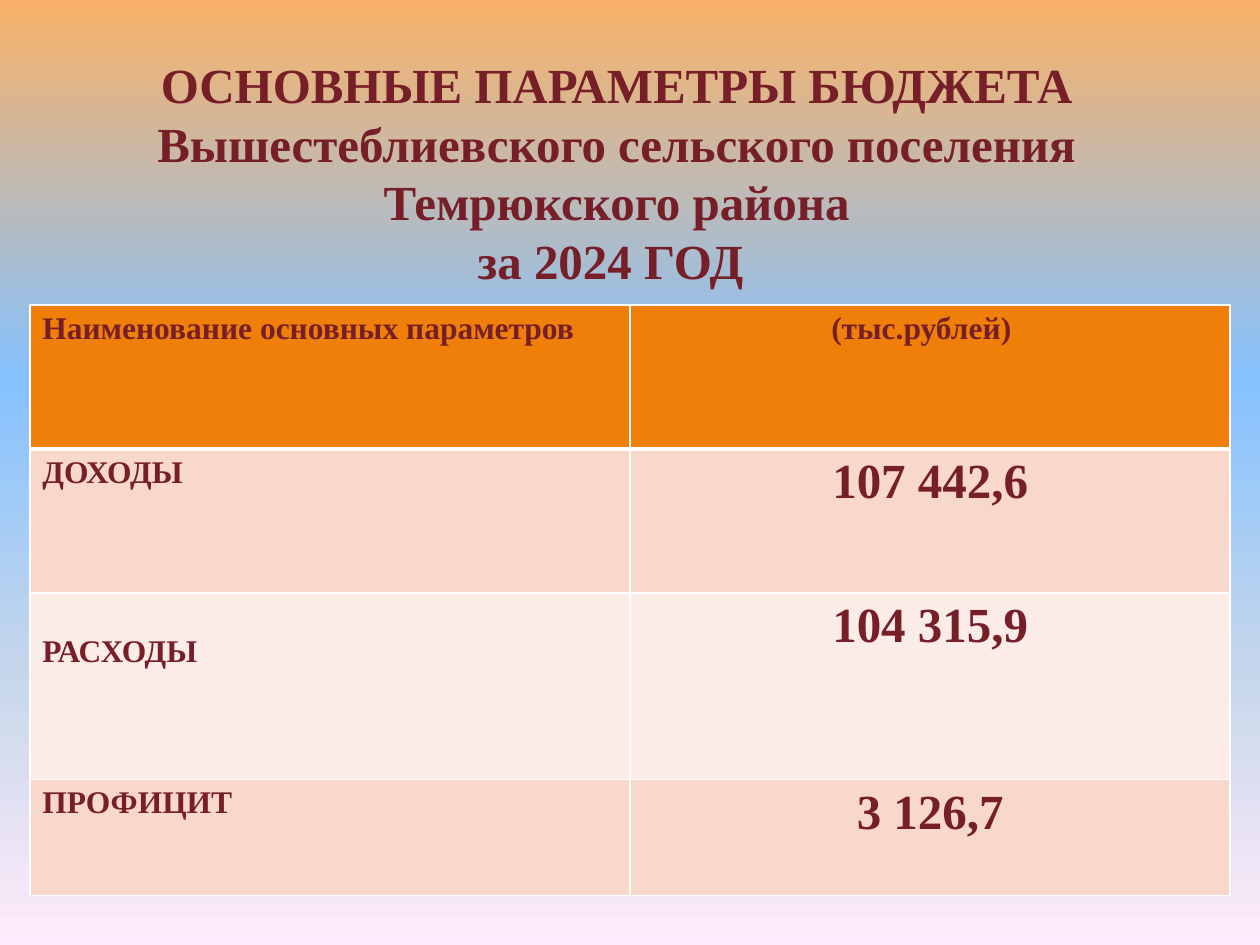
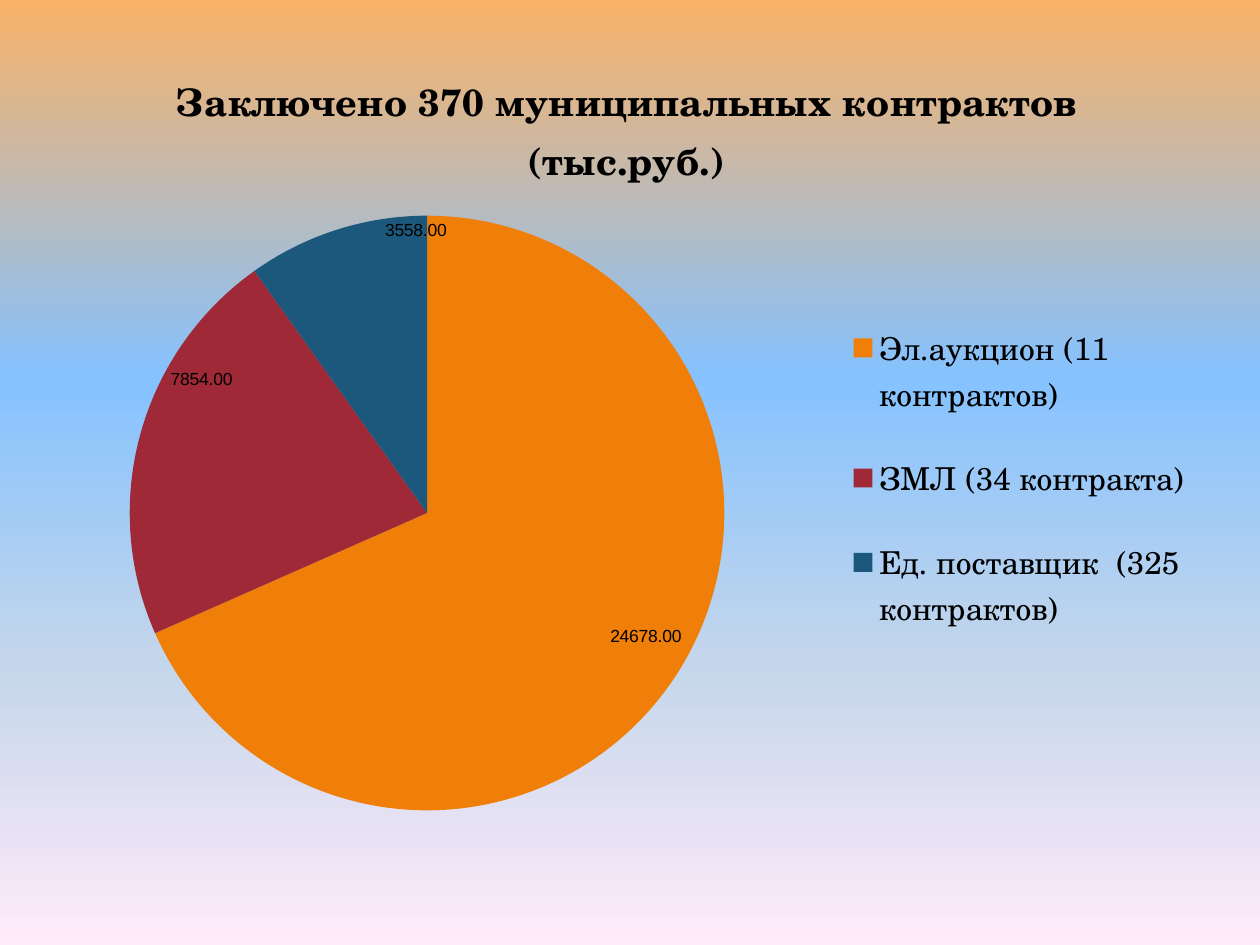
from copy import deepcopy
from dataclasses import dataclass

from lxml.etree import SubElement
from pptx import Presentation
from pptx.chart.data import CategoryChartData
from pptx.dml.color import RGBColor
from pptx.enum.chart import XL_CHART_TYPE, XL_LABEL_POSITION, XL_LEGEND_POSITION
from pptx.enum.text import MSO_ANCHOR, PP_ALIGN
from pptx.oxml import parse_xml
from pptx.oxml.ns import nsdecls, qn
from pptx.util import Cm, Pt


@dataclass(frozen=True)
class Theme:
    sky: tuple = ((0, "F9B268"), (0.4, "85C2FF"), (0.7, "C4D6EB"), (1, "FFEBFA"))
    ink: str = "771F28"
    black: str = "000000"
    border: str = "FFFFFF"
    header: str = "F07F09"
    bands: tuple = ("F9D8CC", "FCECE7")
    slices: tuple = ("F07F09", "9F2936", "1B587C")
    serif: str = "Times New Roman"
    school: str = "TeX Gyre Schola"
    sans: str = "Arial"
    large: int = 28
    chart_title: float = 21.6
    body: int = 18
    label: int = 10


T = Theme()

TITLE = (
    "ОСНОВНЫЕ ПАРАМЕТРЫ БЮДЖЕТА Вышестеблиевского сельского поселения "
    "Темрюкского района\vза 2024 ГОД "
)
BUDGET = [
    ("Наименование основных параметров", "(тыс.рублей)"),
    ("ДОХОДЫ", "107 442,6"),
    ("РАСХОДЫ", "104 315,9"),
    ("ПРОФИЦИТ", "3 126,7"),
]
ROW_HEIGHTS = (2.9, 2.9, 3.76, 2.34)
COLUMN_WIDTH = 12.1
CELL_MARGINS = {
    (0, 1): {"margin_right": Cm(0.61)},
    (2, 0): {"margin_top": Cm(0.84)},
}

CHART_TITLE = ("Заключено 370 муниципальных контрактов", "(тыс.руб.)")
CONTRACTS = {
    "Эл.аукцион (11 контрактов)": 24678,
    "ЗМЛ (34 контракта)": 7854,
    "Ед. поставщик  (325 контрактов)": 3558,
}
LABEL_SHIFTS = ((0.01, -0.03), (0.02, -0.08), (0.04, -0.02))


def set_font(font, size, name=None, color=T.black, bold=False):
    values = {"size": Pt(size), "name": name, "bold": bold}
    for key, value in values.items():
        setattr(font, key, value)
    font.color.rgb = RGBColor.from_string(color)


def paint_background(master):
    fill = master.background.fill
    fill.gradient()
    fill.gradient_angle = 270
    stops = master.element.xpath("./p:cSld/p:bg//a:gs")
    for _ in T.sky[len(stops):]:
        stops[-1].addnext(deepcopy(stops[-1]))
    for stop, (position, color) in zip(fill.gradient_stops, T.sky):
        stop.position = position
        stop.color.rgb = RGBColor.from_string(color)


def add_title(s):
    sp = s.shapes.title
    frame = {"left": Cm(0.85), "top": Cm(1.11), "width": Cm(23.16), "height": Cm(4.72)}
    for key, value in frame.items():
        setattr(sp, key, value)
    tf = sp.text_frame
    tf.word_wrap = True
    tf.vertical_anchor = MSO_ANCHOR.MIDDLE
    tf.text = TITLE
    p = tf.paragraphs[0]
    p.alignment = PP_ALIGN.CENTER
    p.line_spacing = Pt(33.4)
    for r in p.runs:
        set_font(r.font, T.large, T.serif, T.ink, True)


def border_xml(side, width):
    return parse_xml(
        f'<a:{side} {nsdecls("a")} w="{Pt(width)}"><a:solidFill>'
        f'<a:srgbClr val="{T.border}"/></a:solidFill></a:{side}>'
    )


def format_cell(cell, row, col, text):
    cell.text = text
    p = cell.text_frame.paragraphs[0]
    p.alignment = PP_ALIGN.CENTER if col else PP_ALIGN.LEFT
    size = T.large if row and col else T.body
    set_font(p.runs[0].font, size, T.serif, T.ink, True)
    for key, value in CELL_MARGINS.get((row, col), {}).items():
        setattr(cell, key, value)
    color = T.bands[(row - 1) % 2] if row else T.header
    cell.fill.solid()
    cell.fill.fore_color.rgb = RGBColor.from_string(color)
    widths = {"lnL": 1, "lnR": 1, "lnT": 3 if row == 1 else 1, "lnB": 1 if row else 3}
    properties = cell._tc.get_or_add_tcPr()
    for i, (side, width) in enumerate(widths.items()):
        properties.insert(i, border_xml(side, width))


def add_budget_table(s):
    columns = len(BUDGET[0])
    table = s.shapes.add_table(
        len(BUDGET), columns, Cm(0.6), Cm(6.15),
        Cm(COLUMN_WIDTH * columns), Cm(sum(ROW_HEIGHTS)),
    ).table
    table.first_row = table.horz_banding = False
    for column in table.columns:
        column.width = Cm(COLUMN_WIDTH)
    for i, texts in enumerate(BUDGET):
        table.rows[i].height = Cm(ROW_HEIGHTS[i])
        for j, text in enumerate(texts):
            format_cell(table.cell(i, j), i, j, text)


def place(parent, index, values, modes):
    for old in parent.findall(qn("c:layout")):
        parent.remove(old)
    layout = parent.makeelement(qn("c:layout"), {})
    parent.insert(index, layout)
    manual = SubElement(layout, qn("c:manualLayout"))
    for key, value in {**modes, **values}.items():
        SubElement(manual, qn(f"c:{key}")).set("val", str(value))


def add_contracts_chart(s):
    data = CategoryChartData(number_format="0.00")
    data.categories = list(CONTRACTS)
    data.add_series("Series 1", list(CONTRACTS.values()))
    chart = s.shapes.add_chart(
        XL_CHART_TYPE.PIE, Cm(0.89), Cm(0.74), Cm(23.39), Cm(16.79), data
    ).chart
    chart.font.size = Pt(T.body)

    chart.has_title = True
    tf = chart.chart_title.text_frame
    for i, line in enumerate(CHART_TITLE):
        p = tf.add_paragraph() if i else tf.paragraphs[0]
        p.alignment = PP_ALIGN.CENTER
        r = p.add_run()
        r.text = line
        set_font(r.font, T.chart_title, T.school, bold=True)

    chart.has_legend = True
    chart.legend.position = XL_LEGEND_POSITION.RIGHT
    chart.legend.include_in_layout = False
    set_font(chart.legend.font, T.body, T.school)

    plot = chart.plots[0]
    plot.vary_by_categories = True
    for i, color in enumerate(T.slices):
        point = plot.series[0].points[i]
        point.format.fill.solid()
        point.format.fill.fore_color.rgb = RGBColor.from_string(color)
        set_font(point.data_label.font, T.label, T.sans)
        point.data_label.position = XL_LABEL_POSITION.INSIDE_END

    edge = {"xMode": "edge", "yMode": "edge"}
    root = chart.element
    regions = [
        ("c:title", 1, {"x": 0.11, "y": 0.035}, edge),
        ("c:legend", 1, {"x": 0.69, "y": 0.3, "w": 0.3, "h": 0.46}, edge),
        ("c:plotArea", 0, {"x": 0, "y": 0.215, "w": 0.66, "h": 0.714},
         {"layoutTarget": "inner", **edge}),
    ]
    for tag, index, values, modes in regions:
        place(root.xpath(f"./c:chart/{tag}")[0], index, values, modes)
    for label, (x, y) in zip(root.xpath(".//c:dLbl"), LABEL_SHIFTS):
        place(label, 1, {"x": x, "y": y}, {})


def main():
    prs = Presentation()
    prs.slide_width, prs.slide_height = Cm(25.4), Cm(19.05)
    paint_background(prs.slide_master)
    title_only, blank = prs.slide_layouts[5], prs.slide_layouts[6]
    s = prs.slides.add_slide(title_only)
    add_title(s)
    add_budget_table(s)
    add_contracts_chart(prs.slides.add_slide(blank))
    prs.save("out.pptx")


if __name__ == "__main__":
    main()
